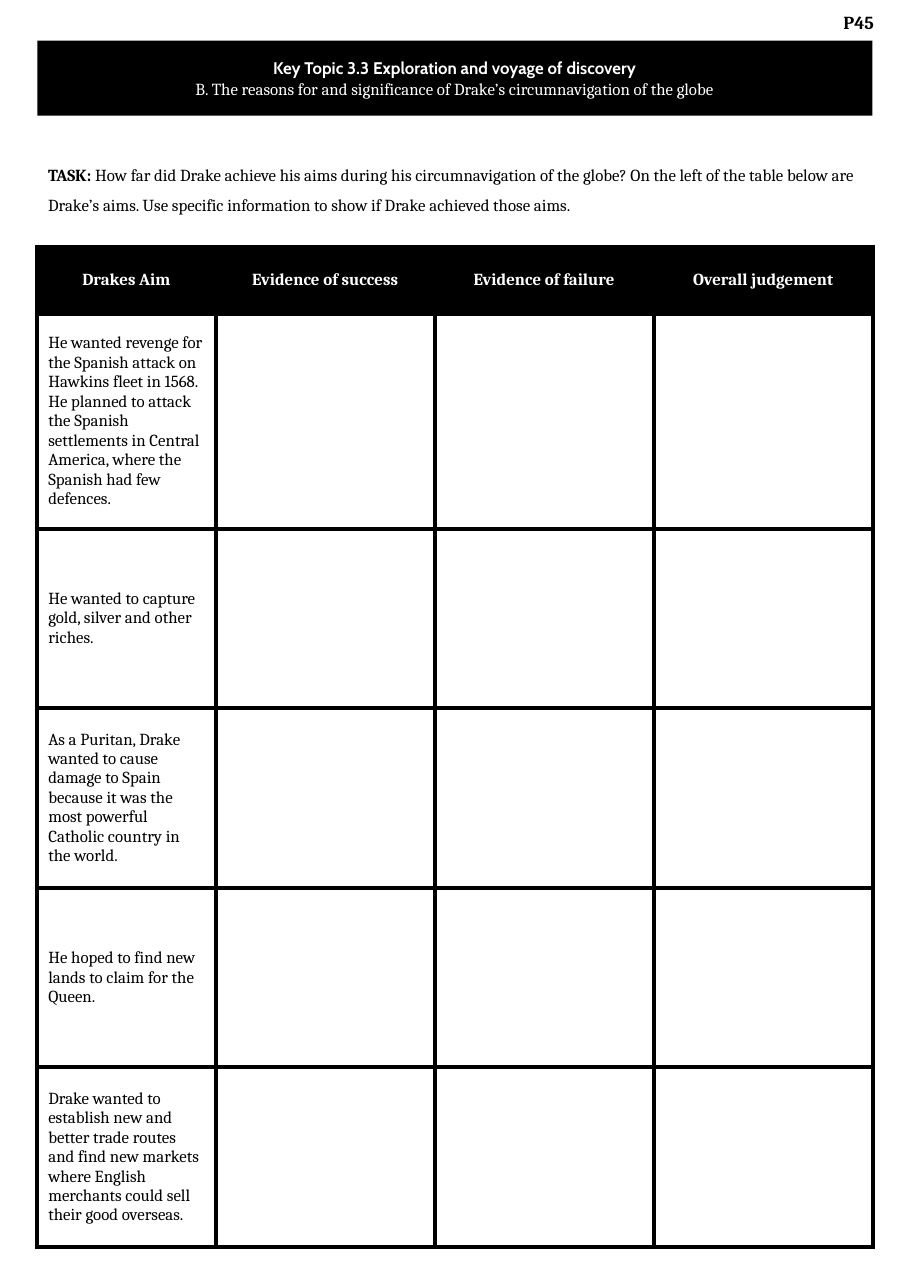
from dataclasses import dataclass

from lxml.etree import SubElement
from pptx import Presentation
from pptx.dml.color import RGBColor
from pptx.enum.shapes import MSO_SHAPE as Shape
from pptx.enum.text import MSO_ANCHOR as Anchor, MSO_AUTO_SIZE as AutoSize, PP_ALIGN as Align
from pptx.oxml.ns import qn
from pptx.util import Cm, Pt

LEFT, WIDTH = 0.86, 19.25

HEADINGS = ["Drakes Aim", "Evidence of success", "Evidence of failure", "Overall judgement"]
AIMS = [
    "He wanted revenge for the Spanish attack on Hawkins fleet in 1568. He planned to attack "
    "the Spanish settlements in Central America, where the Spanish had few defences.",
    "He wanted to capture gold, silver and other riches.",
    "As a Puritan, Drake wanted to cause damage to Spain because it was the most powerful "
    "Catholic country in the world.",
    "He hoped to find new lands to claim for the Queen.",
    "Drake wanted to establish new and better trade routes and find new markets where English "
    "merchants could sell their good overseas.",
]
COLUMN_WIDTHS = [4.11] + [5.05] * 3
ROW_HEIGHTS = [1.55, 4.95] + [4.14] * 4


@dataclass(frozen=True)
class Theme:
    ink: RGBColor = RGBColor(0, 0, 0)
    paper: RGBColor = RGBColor(255, 255, 255)
    body_font: str = "Cambria"
    title_font: str = "Cabin"
    body_size: int = 11
    page_size: int = 12
    border: int = 3


class Worksheet:
    def __init__(self, slide, theme):
        self.slide = slide
        self.theme = theme

    def style(self, span, color, bold=False, name=None, size=None):
        font = span.font
        font.name = name or self.theme.body_font
        font.size = Pt(size or self.theme.body_size)
        font.bold = bold
        font.color.rgb = color

    def text_box(self, left, top, width, height):
        box = self.slide.shapes.add_textbox(Cm(left), Cm(top), Cm(width), Cm(height))
        box.text_frame.word_wrap = True
        return box.text_frame

    def page_number(self, label):
        frame = self.text_box(19.02, 0, 1.55, 2.26)
        frame.margin_top = frame.margin_bottom = Cm(0.25)
        frame.text = label
        para = frame.paragraphs[0]
        para.alignment = Align.CENTER
        self.style(para.runs[0], self.theme.ink, bold=True, size=self.theme.page_size)

    def banner(self, title, subtitle):
        box = self.slide.shapes.add_shape(
            Shape.RECTANGLE, Cm(LEFT), Cm(0.94), Cm(WIDTH), Cm(1.73))
        box.shadow.inherit = False
        box.fill.solid()
        box.fill.fore_color.rgb = self.theme.ink
        box.line.fill.background()
        frame = box.text_frame
        frame.word_wrap = True
        frame.vertical_anchor = Anchor.MIDDLE
        frame.margin_top = frame.margin_bottom = Cm(0.25)
        frame.text = f"{title}\n{subtitle}"
        for para in frame.paragraphs:
            para.alignment = Align.CENTER
        heading, detail = frame.paragraphs
        self.style(heading.runs[0], self.theme.paper, bold=True, name=self.theme.title_font)
        self.style(detail.runs[0], self.theme.paper)

    def task(self, label, instruction):
        frame = self.text_box(LEFT, 3.43, WIDTH, 1.57)
        frame.auto_size = AutoSize.SHAPE_TO_FIT_TEXT
        para = frame.paragraphs[0]
        para.line_spacing = 1.5
        for text, bold in ((label, True), (instruction, False)):
            span = para.add_run()
            span.text = text
            self.style(span, self.theme.ink, bold)

    def outline(self, cell):
        """Draw all four borders; they must precede the cell fill in the XML."""
        properties = cell._tc.get_or_add_tcPr()
        for side in ("a:lnL", "a:lnR", "a:lnT", "a:lnB"):
            line = SubElement(properties, qn(side), w=str(Pt(self.theme.border)))
            fill = SubElement(line, qn("a:solidFill"))
            SubElement(fill, qn("a:srgbClr"), val=str(self.theme.ink))

    def cell(self, cell, text, is_heading):
        theme = self.theme
        self.outline(cell)
        cell.fill.solid()
        cell.fill.fore_color.rgb = theme.ink if is_heading else theme.paper
        cell.vertical_anchor = Anchor.MIDDLE
        if text:
            cell.text_frame.text = text
            para = cell.text_frame.paragraphs[0]
            para.alignment = Align.CENTER if is_heading else Align.LEFT
            self.style(para.runs[0], theme.paper if is_heading else theme.ink, is_heading)

    def table(self, rows):
        table = self.slide.shapes.add_table(
            len(rows), len(COLUMN_WIDTHS), Cm(LEFT), Cm(5.69),
            Cm(sum(COLUMN_WIDTHS)), Cm(sum(ROW_HEIGHTS))).table
        for column, width in zip(table.columns, COLUMN_WIDTHS):
            column.width = Cm(width)
        for row, height in zip(table.rows, ROW_HEIGHTS):
            row.height = Cm(height)
        for row_index, texts in enumerate(rows):
            for column_index, text in enumerate(texts):
                self.cell(table.cell(row_index, column_index), text, row_index == 0)


def main():
    deck = Presentation()
    deck.slide_width, deck.slide_height = Cm(21), Cm(29.7)
    page = Worksheet(deck.slides.add_slide(deck.slide_layouts[6]), Theme())
    page.page_number("P45")
    page.banner("Key Topic 3.3 Exploration and voyage of discovery",
                "B. The reasons for and significance of Drake’s circumnavigation of the globe")
    page.task("TASK: ",
              "How far did Drake achieve his aims during his circumnavigation of the globe? "
              "On the left of the table below are Drake’s aims. Use specific information to "
              "show if Drake achieved those aims.")
    page.table([HEADINGS] + [[aim, "", "", ""] for aim in AIMS])
    deck.save("out.pptx")


if __name__ == "__main__":
    main()
